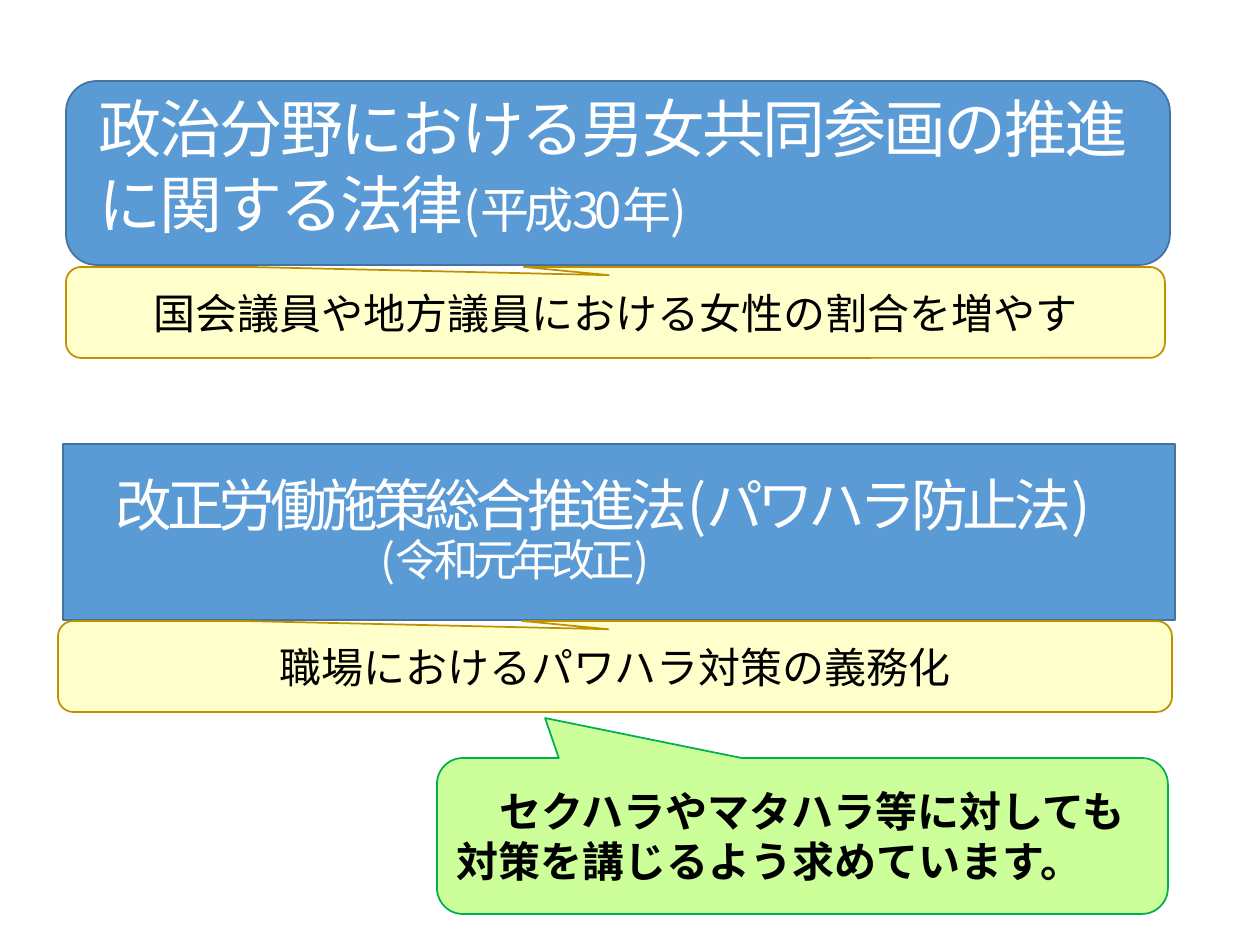
"""Builds a slide on two laws, each with an explanation beneath it."""
from pptx import Presentation
from pptx.dml.color import RGBColor
from pptx.enum.shapes import MSO_SHAPE
from pptx.enum.text import MSO_ANCHOR, PP_ALIGN
from pptx.oxml.ns import qn
from pptx.util import Pt

PIXEL = 914400 / 126
FONT = "Noto Sans CJK JP"
COLORS = {
    "blue": "5B9BD5", "blue line": "43739E",
    "yellow": "FFFFCC", "yellow line": "BF9000",
    "green": "CCFF99", "green line": "00B050",
    "white": "FFFFFF", "black": "000000",
}
NOTE_POINTER = (-0.006, -0.409, 0.167)
REMARK_POINTER = (-0.352, -0.756, 0.167)

# Paragraphs: (left margin, first-line indent, [(text, size, spacing)])
LAWS = [
    {"kind": MSO_SHAPE.RECTANGLE, "box": (63, 444, 1112, 176),
     "anchor": MSO_ANCHOR.MIDDLE, "line_spacing": 0.9,
     "paragraphs": [
         (53, 0, [("改正労働施策総合推進法(パワハラ防止法)", 32.4, -3)]),
         (318, 0, [("(令和元年改正)", 25.2, -3)])]},
    {"kind": MSO_SHAPE.ROUNDED_RECTANGLE, "box": (66, 81, 1104, 184),
     "anchor": MSO_ANCHOR.TOP, "line_spacing": 1.0,
     "paragraphs": [
         (24, 0, [("政治分野における男女共同参画の推進", 36, -1.5)]),
         (24, 0, [("に関する法律", 36, -1.5), ("(平成30年)", 28, -3)])]},
]
CALLOUTS = [
    {"box": (66, 267, 1099, 91), "color": "yellow", "pointer": NOTE_POINTER,
     "align": PP_ALIGN.CENTER, "bold": False, "indent": 0,
     "text": "国会議員や地方議員における女性の割合を増やす"},
    {"box": (58, 621, 1114, 91), "color": "yellow", "pointer": NOTE_POINTER,
     "align": PP_ALIGN.CENTER, "bold": False, "indent": 0,
     "text": "職場におけるパワハラ対策の義務化"},
    {"box": (437, 758, 731, 156), "color": "green", "pointer": REMARK_POINTER,
     "align": PP_ALIGN.LEFT, "bold": True, "indent": 43,
     "text": "セクハラやマタハラ等に対しても対策を講じるよう求めています。"},
]


def px(value):
    return round(value * PIXEL)


def rgb(name):
    return RGBColor.from_string(COLORS[name])


def add_box(slide, kind, box, color, anchor):
    shape = slide.shapes.add_shape(kind, *map(px, box))
    shape.shadow.inherit = False
    shape.fill.solid()
    shape.fill.fore_color.rgb = rgb(color)
    shape.line.color.rgb = rgb(f"{color} line")
    shape.line.width = Pt(1)
    shape.text_frame.word_wrap = True
    shape.text_frame.vertical_anchor = anchor
    return shape


def fill_text(frame, paragraphs, color, align, bold=False, line_spacing=1.0):
    for index, (margin, indent, runs) in enumerate(paragraphs):
        paragraph = frame.add_paragraph() if index else frame.paragraphs[0]
        paragraph.alignment = align
        paragraph.line_spacing = line_spacing
        properties = paragraph._p.get_or_add_pPr()
        properties.set("marL", str(px(margin)))
        properties.set("indent", str(px(indent)))
        for text, size, spacing in runs:
            run = paragraph.add_run()
            run.text = text
            run.font.size = Pt(size)
            run.font.bold = bold
            run.font.color.rgb = rgb(color)
            run.font.name = FONT
            character = run._r.get_or_add_rPr()
            character.set("spc", str(round(spacing * 100)))
            east_asian = character.makeelement(qn("a:ea"), {"typeface": FONT})
            character.find(qn("a:latin")).addnext(east_asian)


def add_law(slide, law):
    shape = add_box(slide, law["kind"], law["box"], "blue", law["anchor"])
    frame = shape.text_frame
    frame.margin_left = frame.margin_right = 0
    frame.margin_top = frame.margin_bottom = 0
    fill_text(frame, law["paragraphs"], "white", PP_ALIGN.LEFT,
              line_spacing=law["line_spacing"])


def add_callout(slide, callout):
    shape = add_box(slide, MSO_SHAPE.ROUNDED_RECTANGULAR_CALLOUT,
                    callout["box"], callout["color"], MSO_ANCHOR.MIDDLE)
    for index, value in enumerate(callout["pointer"]):
        shape.adjustments[index] = value
    paragraphs = [(0, callout["indent"], [(callout["text"], 24, 0)])]
    fill_text(shape.text_frame, paragraphs, "black", callout["align"],
              callout["bold"])


def main():
    presentation = Presentation()
    presentation.slide_width = px(1260)
    presentation.slide_height = px(945)
    slide = presentation.slides.add_slide(presentation.slide_layouts[6])
    for law in LAWS:
        add_law(slide, law)
    for callout in CALLOUTS:
        add_callout(slide, callout)
    presentation.save("out.pptx")


if __name__ == "__main__":
    main()
